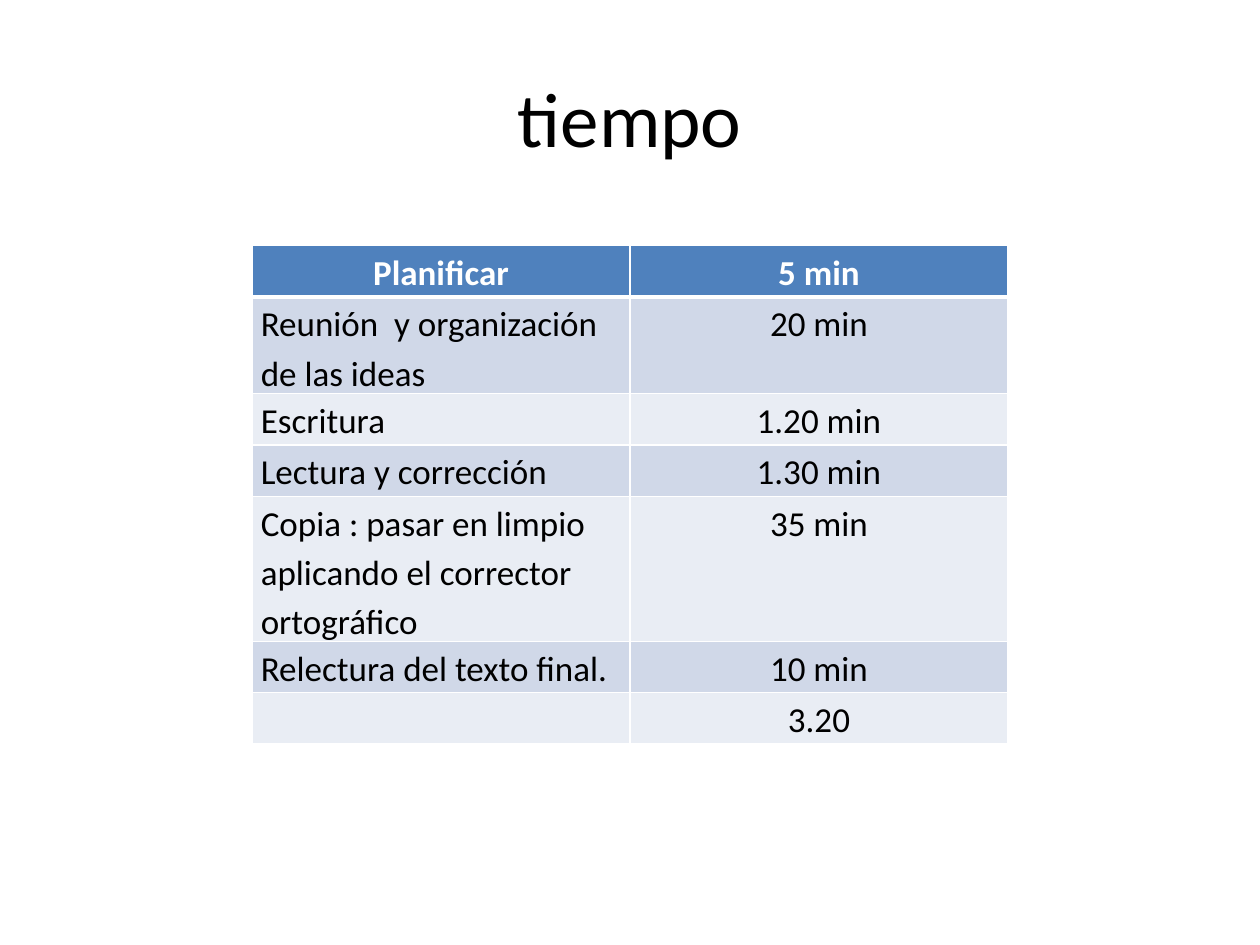
from lxml import etree
from pptx import Presentation
from pptx import util as u
from pptx.dml.color import RGBColor
from pptx.enum import text
from pptx.oxml import ns

ROWS = [
    ("Planificar", "5 min"),
    ("Reunión  y organización de las ideas", "20 min"),
    ("Escritura", "1.20 min"),
    ("Lectura y corrección", "1.30 min"),
    ("Copia : pasar en limpio aplicando el corrector ortográfico", "35 min"),
    ("Relectura del texto final.", "10 min"),
    ("", "3.20"),
]


def color(value):
    return RGBColor.from_string(value)


class Page:
    font = "Calibri"
    ink, paper, header = "000000", "FFFFFF", "4F81BD"
    bands = ("E9EDF4", "D0D8E8")

    def __init__(self, deck):
        self.width, self.height = deck.slide_width, deck.slide_height
        self.slide = deck.slides.add_slide(deck.slide_layouts[6])

    def area(self, left, top, width, height):
        return (int(left * self.width), int(top * self.height),
                int(width * self.width), int(height * self.height))

    def set_words(self, frame, words, size, ink, bold=False, centred=True):
        frame.text = words
        para = frame.paragraphs[0]
        para.alignment = text.PP_ALIGN.CENTER if centred else text.PP_ALIGN.LEFT
        para.font.size = u.Pt(size)
        for span in para.runs:
            span.font.name, span.font.size = self.font, u.Pt(size)
            span.font.bold = bold
            span.font.color.rgb = color(ink)
        return para

    def title(self, words, *shares):
        frame = self.slide.shapes.add_textbox(*self.area(*shares)).text_frame
        frame.word_wrap = True
        frame.vertical_anchor = text.MSO_ANCHOR.MIDDLE
        self.set_words(frame, words, 44, self.ink)

    def border(self, cell, side, points):
        properties = cell._tc.get_or_add_tcPr()
        line = etree.SubElement(properties, ns.qn(f"a:ln{side}"), w=str(int(u.Pt(points))))
        fill = etree.SubElement(line, ns.qn("a:solidFill"))
        etree.SubElement(fill, ns.qn("a:srgbClr"), val=self.paper)

    def cell(self, cell, words, row, column):
        is_header = row == 0
        cell.margin_left = cell.margin_right = u.Inches(0.07)
        cell.margin_top = cell.margin_bottom = 0
        para = self.set_words(cell.text_frame, words, 20,
                              self.paper if is_header else self.ink,
                              is_header, is_header or column == 1)
        para.line_spacing = 1.15
        widths = {"L": 1, "R": 1, "T": 3 if row == 1 else 1, "B": 3 if is_header else 1}
        for side, points in widths.items():
            self.border(cell, side, points)
        cell.fill.solid()
        cell.fill.fore_color.rgb = color(self.header if is_header else self.bands[row % 2])

    def table(self, rows, *shares):
        table = self.slide.shapes.add_table(len(rows), len(rows[0]), *self.area(*shares)).table
        for row, record in enumerate(rows):
            for column, words in enumerate(record):
                self.cell(table.cell(row, column), words, row, column)


def main():
    deck = Presentation()
    deck.slide_width, deck.slide_height = u.Inches(10), u.Inches(7.5)
    page = Page(deck)
    page.title("tiempo", 0.05, 0.04, 0.9, 1 / 6)
    page.table(ROWS, 0.2, 0.26, 0.6, 0.38)
    deck.save("out.pptx")


if __name__ == "__main__":
    main()
